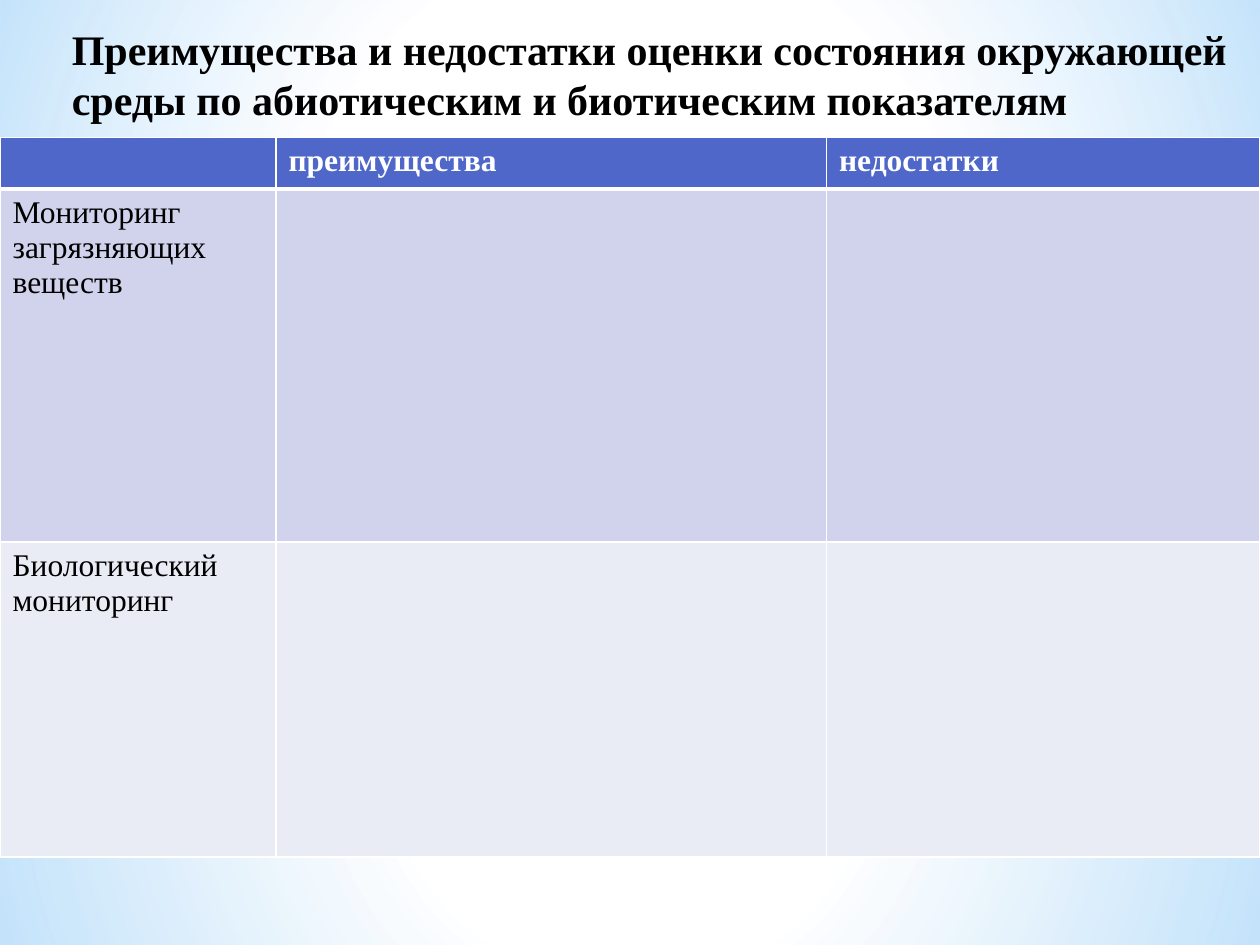
import pptx
import pptx.dml.color
import pptx.enum.shapes
import pptx.enum.text
import pptx.oxml
import pptx.oxml.ns
import pptx.util
from pptx.util import Inches

COLORS = {"white": "FFFFFF", "sky": "B4DCFA", "header": "4E67C8",
          "odd row": "D0D3EB", "even row": "E9EBF5", "text": "000000"}
FONT = "Times New Roman"
NAMESPACE = pptx.oxml.ns.nsdecls("a")
RADIAL = ('<a:path path="circle"><a:fillToRect l="50000" t="50000" '
          'r="50000" b="50000"/></a:path>')
VERTICAL = '<a:lin ang="5400000" scaled="0"/>'


def add_span(para, text, size, color, bold):
    span = para.add_run()
    span.text = text
    span.font.name = FONT
    span.font.size = pptx.util.Pt(size)
    span.font.bold = bold
    span.font.color.rgb = pptx.dml.color.RGBColor.from_string(COLORS[color])


deck = pptx.Presentation()
deck.slide_width, deck.slide_height = Inches(10), Inches(7.5)
page = deck.slides.add_slide(deck.slide_layouts[5])

# Background glows: preset, top, height, direction, stops (position, colour, opacity)
rectangle = pptx.enum.shapes.MSO_SHAPE.RECTANGLE
oval = pptx.enum.shapes.MSO_SHAPE.OVAL
glows = [
    (rectangle, 4.23, 3.27, RADIAL,
     [(0, "white", 91), (37, "white", 76), (100, "sky", 79)]),
    (rectangle, 0, 4.23, RADIAL,
     [(0, "white", 89), (48, "white", 62), (100, "sky", 79)]),
    (rectangle, 2.9, 2.5, VERTICAL,
     [(0, "white", 0), (29, "white", 30), (45, "sky", 40),
      (55, "white", 26), (65, "sky", 60), (100, "white", 0)]),
    (oval, 1.75, 5.58, RADIAL, [(0, "white", 100), (54, "white", 0)]),
]
for preset, top, height, direction, stops in glows:
    glow = page.shapes.add_shape(preset, 0, Inches(top), deck.slide_width, Inches(height))
    glow.shadow.inherit = False
    glow.line.fill.background()
    stop_xml = "".join(
        f'<a:gs pos="{position * 1000}"><a:srgbClr val="{COLORS[color]}">'
        f'<a:alpha val="{opacity * 1000}"/></a:srgbClr></a:gs>'
        for position, color, opacity in stops)
    gradient = pptx.oxml.parse_xml(
        f'<a:gradFill {NAMESPACE} rotWithShape="1"><a:gsLst>{stop_xml}</a:gsLst>'
        f'{direction}</a:gradFill>')
    glow.element.spPr.find(pptx.oxml.ns.qn("a:prstGeom")).addnext(gradient)

# Comparison table
rows = [
    ("header", 0.41, ["", "преимущества", "недостатки"]),
    ("odd row", 2.8, ["Мониторинг загрязняющих веществ", "", ""]),
    ("even row", 2.5, ["Биологический мониторинг", "", ""]),
]
widths = [2.19, 4.37, 3.44]
frame = page.shapes.add_table(len(rows), len(widths), 0, Inches(1.09),
                              deck.slide_width, Inches(5.7))
table = frame.table
for column, width in zip(table.columns, widths):
    column.width = Inches(width)
for row_index, (fill, height, texts) in enumerate(rows):
    table.rows[row_index].height = Inches(height)
    is_header = fill == "header"
    for column_index, text in enumerate(texts):
        cell = table.cell(row_index, column_index)
        properties = cell._tc.get_or_add_tcPr()
        for side in ("L", "R", "T", "B"):
            thick = (is_header and side == "B") or (row_index == 1 and side == "T")
            properties.append(pptx.oxml.parse_xml(
                f'<a:ln{side} {NAMESPACE} w="{pptx.util.Pt(3 if thick else 1)}">'
                f'<a:solidFill><a:srgbClr val="{COLORS["white"]}"/></a:solidFill>'
                f'</a:ln{side}>'))
        cell.fill.solid()
        cell.fill.fore_color.rgb = pptx.dml.color.RGBColor.from_string(COLORS[fill])
        if text:
            add_span(cell.text_frame.paragraphs[0], text, 18,
                     "white" if is_header else "text", is_header)

# Title, brought in front of the background
title = page.shapes.title
title.left, title.top = Inches(0.47), Inches(0)
title.width, title.height = Inches(9.38), Inches(1.17)
title.text_frame.word_wrap = True
title.text_frame.auto_size = pptx.enum.text.MSO_AUTO_SIZE.NONE
title.text_frame.vertical_anchor = pptx.enum.text.MSO_ANCHOR.MIDDLE
para = title.text_frame.paragraphs[0]
para.alignment = pptx.enum.text.PP_ALIGN.LEFT
add_span(para, "Преимущества и недостатки оценки состояния окружающей среды "
               "по абиотическим и биотическим показателям", 24, "text", True)
frame.element.addnext(title.element)

deck.save("out.pptx")
